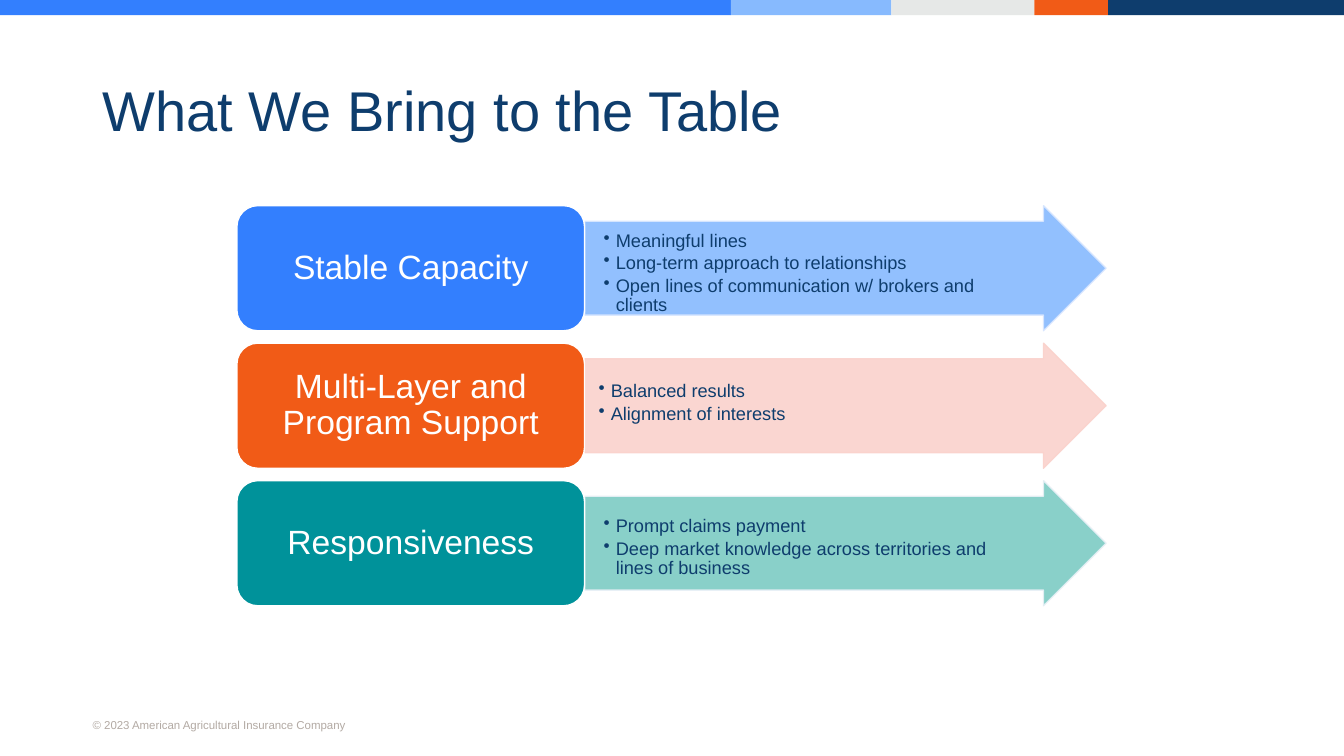
from itertools import accumulate

from lxml.etree import SubElement
from pptx import Presentation
from pptx.dml.color import RGBColor
from pptx.enum.shapes import MSO_SHAPE as Shape
from pptx.enum.text import MSO_ANCHOR as Anchor, PP_ALIGN as Align
from pptx.oxml.ns import qn
from pptx.util import Inches, Pt

WIDTH, HEIGHT = 13.33, 7.5
COLORS = {
    "blue": "337FFE", "sky": "87BAFE", "mist": "E6E8E7", "orange": "F15B17",
    "navy": "0E3D6D", "teal": "00929A", "mint": "7DCBC4", "blush": "FAD2CC",
    "ice": "D9E7FF", "frost": "E8F0F6", "white": "FFFFFF", "stone": "B3AAA4",
}
BANDS = [("blue", 7.25), ("sky", 1.59), ("mist", 1.42), ("orange", 0.73), ("navy", 2.34)]
ROWS = [
    dict(label="Stable Capacity", fill="blue", arrow="sky", edge="ice",
         anchor=Anchor.TOP, top=0.1, indent=0.3,
         points=["Meaningful lines", "Long-term approach to relationships",
                 "Open lines of communication w/ brokers and clients"]),
    dict(label="Multi-Layer and Program Support", fill="orange", arrow="blush", edge="blush",
         anchor=Anchor.TOP, top=0.23, indent=0.25,
         points=["Balanced results", "Alignment of interests"]),
    dict(label="Responsiveness", fill="teal", arrow="mint", edge="frost",
         anchor=Anchor.MIDDLE, top=0.1, indent=0.3,
         points=["Prompt claims payment",
                 "Deep market knowledge across territories and lines of business"]),
]


def rgb(name):
    """Return the named palette colour."""
    return RGBColor.from_string(COLORS[name])


def set_attrs(obj, **values):
    """Set every given attribute on an object."""
    for name, value in values.items():
        setattr(obj, name, value)


def set_frame(tf, anchor, left=0.1, top=0.05, right=0.1, bottom=0.05):
    """Set wrapping, anchor and insets of a text frame."""
    set_attrs(tf, word_wrap=True, vertical_anchor=anchor,
              margin_left=Inches(left), margin_top=Inches(top),
              margin_right=Inches(right), margin_bottom=Inches(bottom))


def write(p, text, size, color, align=Align.LEFT, **spacing):
    """Put one formatted run into a paragraph."""
    set_attrs(p, alignment=align, **spacing)
    r = p.add_run()
    r.text = text
    set_attrs(r.font, name="Arial", size=Pt(size))
    r.font.color.rgb = rgb(color)


def add_shape(s, kind, box, fill, edge=None, alpha=None):
    """Add a flat preset shape with an optional outline and opacity."""
    sp = s.shapes.add_shape(kind, *map(Inches, box))
    sp.shadow.inherit = False
    sp.fill.solid()
    sp.fill.fore_color.rgb = rgb(fill)
    if edge:
        sp.line.color.rgb = rgb(edge)
        sp.line.width = Pt(1)
    else:
        sp.line.fill.background()
    if alpha:
        for clr in sp._element.spPr.iter(qn("a:srgbClr")):
            SubElement(clr, qn("a:alpha"), val=str(alpha * 1000))
    return sp


def add_bullet(p, indent):
    """Give a paragraph a hanging round bullet."""
    pPr = p._p.get_or_add_pPr()
    pPr.set("marL", str(Inches(indent)))
    pPr.set("indent", str(Inches(-0.12)))
    SubElement(pPr, qn("a:buChar"), char="•")


def add_bands(s, box):
    """Draw the strip of colour bands across a box."""
    x, y, w, h = box
    widths = [width for _, width in BANDS]
    scale = w / sum(widths)
    for (color, width), end in zip(BANDS, accumulate(widths)):
        add_shape(s, Shape.RECTANGLE, (x + (end - width) * scale, y, width * scale, h), color)


def add_title(s, box, text):
    """Place and format the title placeholder."""
    sp = s.shapes.title
    set_attrs(sp, **dict(zip(("left", "top", "width", "height"), map(Inches, box))))
    set_frame(sp.text_frame, Anchor.MIDDLE)
    write(sp.text_frame.paragraphs[0], text, 40, "navy", line_spacing=0.9)


def add_row(s, box, row):
    """Draw a label block followed by an arrow of bullet points."""
    x, y, w, h = box
    label_w = w * 0.4
    arrow = add_shape(s, Shape.RIGHT_ARROW, (x + label_w, y, w - label_w, h),
                      row["arrow"], row["edge"], 90)
    arrow.adjustments[0] = 0.75
    tf = arrow.text_frame
    set_frame(tf, row["anchor"], 0.01, row["top"], 0.31, 0.01)
    for i, text in enumerate(row["points"]):
        p = tf.add_paragraph() if i else tf.paragraphs[0]
        add_bullet(p, row["indent"])
        write(p, text, 13, "navy", line_spacing=0.9, space_after=Pt(2))
    label = add_shape(s, Shape.ROUNDED_RECTANGLE, (x, y, label_w, h), row["fill"], "white")
    set_frame(label.text_frame, Anchor.MIDDLE, 0.16, 0.1, 0.16, 0.1)
    write(label.text_frame.paragraphs[0], row["label"], 24, "white", Align.CENTER,
          line_spacing=0.9)


def add_rows(s, box):
    """Stack the rows evenly in a box with a gap of a tenth of a row."""
    x, y, w, h = box
    pitch = h / (len(ROWS) - 0.09)
    for i, row in enumerate(ROWS):
        add_row(s, (x, y + i * pitch, w, pitch * 0.91), row)


def add_footer(s, box, text):
    """Write the copyright line."""
    tf = s.shapes.add_textbox(*map(Inches, box)).text_frame
    set_frame(tf, Anchor.TOP)
    write(tf.paragraphs[0], text, 8.2, "stone")


def main():
    """Build and save the slide."""
    prs = Presentation()
    set_attrs(prs, slide_width=Inches(WIDTH), slide_height=Inches(HEIGHT))
    s = prs.slides.add_slide(prs.slide_layouts[5])
    add_footer(s, (0.82, 7.07, 5.55, 0.24), "© 2023 American Agricultural Insurance Company")
    add_bands(s, (0, 0, WIDTH, HEIGHT * 0.02))
    add_title(s, (0.92, 0.4, 11.5, 1.45), "What We Bring to the Table")
    add_rows(s, (2.35, 2.04, 8.62, 3.97))
    prs.save("out.pptx")


if __name__ == "__main__":
    main()
